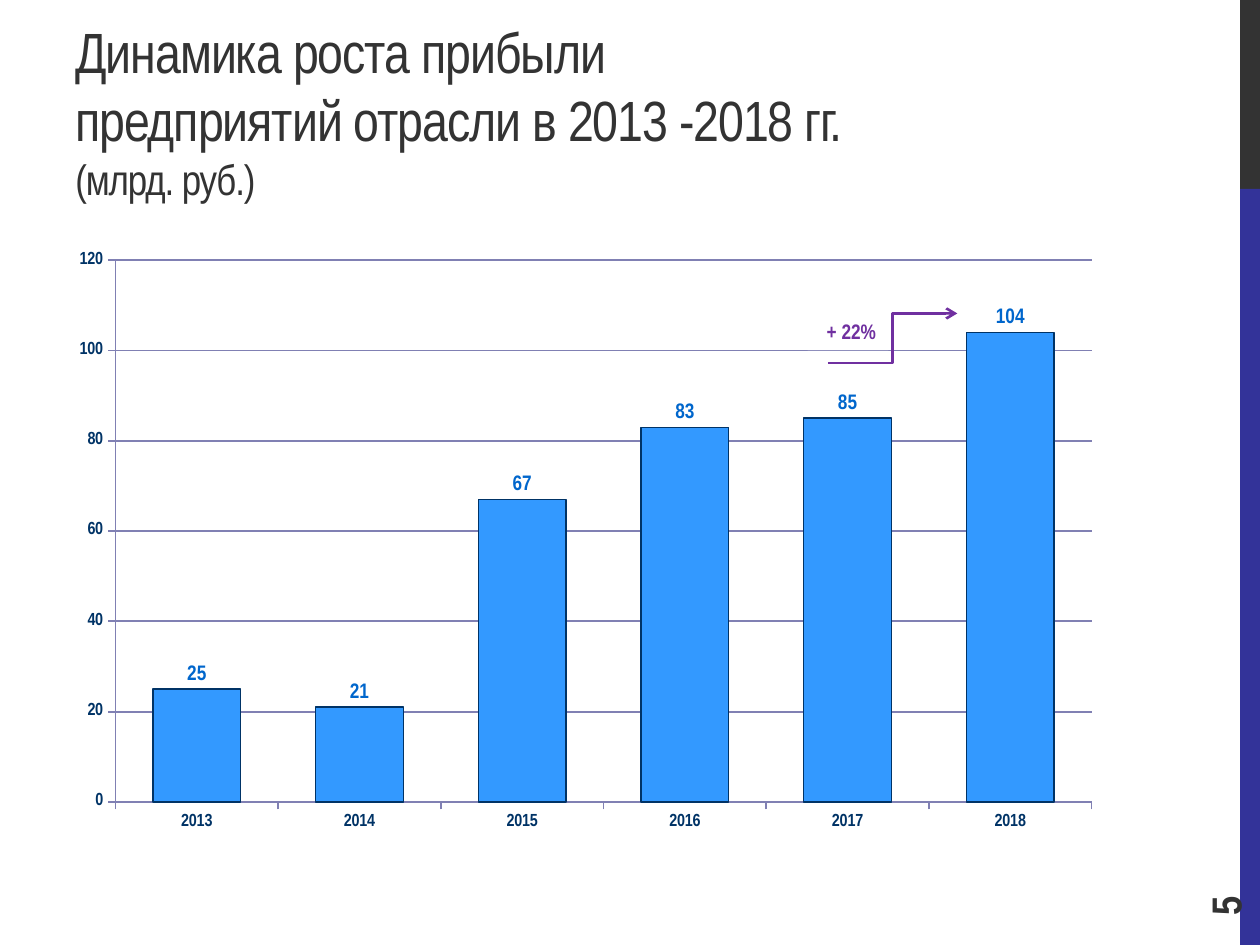
from dataclasses import dataclass

from lxml import etree
from pptx import Presentation
from pptx import util as u
from pptx.chart.data import CategoryChartData
from pptx.dml.color import RGBColor
from pptx.enum import chart as ch
from pptx.enum import shapes, text
from pptx.oxml import parse_xml
from pptx.oxml.ns import nsdecls, qn

FONT = "Arial Narrow"
DARK, INDIGO, NAVY, PURPLE = "333333", "333399", "003366", "7030A0"
BAR, VALUE, GRID = "3399FF", "0066CC", "8080B3"
PROFIT = {"2013": 25, "2014": 21, "2015": 67, "2016": 83, "2017": 85, "2018": 104}


@dataclass(frozen=True)
class Box:
    left: float
    top: float
    width: float
    height: float

    def emu(self) -> tuple:
        return tuple(u.Cm(v) for v in (self.left, self.top, self.width, self.height))


@dataclass(frozen=True)
class Band:
    box: Box
    color: str


BANDS = (
    Band(Box(25, 0, 0.4, 3.81), DARK),
    Band(Box(25, 3.81, 0.4, 15.24), INDIGO),
)


def rgb(value: str) -> RGBColor:
    return RGBColor.from_string(value)


def style_font(font, size: float, color: str, bold: bool = False) -> None:
    font.name = FONT
    font.size = u.Pt(size)
    font.bold = bold
    font.color.rgb = rgb(color)


def style_line(line, color: str, width: float) -> None:
    line.color.rgb = rgb(color)
    line.width = u.Pt(width)


def add_block(slide, box: Box, color: str):
    block = slide.shapes.add_shape(shapes.MSO_SHAPE.RECTANGLE, *box.emu())
    block.shadow.inherit = False
    block.fill.solid()
    block.fill.fore_color.rgb = rgb(color)
    block.line.fill.background()
    return block


def add_title(slide, box: Box) -> None:
    frame = slide.shapes.add_textbox(*box.emu()).text_frame
    frame.word_wrap = True
    frame.vertical_anchor = text.MSO_ANCHOR.BOTTOM
    heading = frame.paragraphs[0]
    for wording, size in (
        ("Динамика роста прибыли предприятий отрасли в 2013 -2018 гг. ", 32.4),
        ("(млрд. руб.)", 24.3),
    ):
        run = heading.add_run()
        run.text = wording
        style_font(run.font, size, DARK)
        run.font._element.set("spc", "-60")


def add_page_number(slide, box: Box, number: str) -> None:
    holder = slide.shapes.add_textbox(*box.emu())
    holder.rotation = 270
    frame = holder.text_frame
    frame.word_wrap = True
    frame.vertical_anchor = text.MSO_ANCHOR.MIDDLE
    frame.text = number
    style_font(frame.paragraphs[0].font, 24, DARK, True)


def style_axis(axis) -> None:
    axis.major_tick_mark = ch.XL_TICK_MARK.OUTSIDE
    axis.minor_tick_mark = ch.XL_TICK_MARK.NONE
    style_font(axis.tick_labels.font, 10, NAVY, True)
    style_line(axis.format.line, GRID, 1)


def set_plot_layout(chart, box: Box) -> None:
    plot_area = chart._chartSpace.find(".//" + qn("c:plotArea"))
    for old in plot_area.findall(qn("c:layout")):
        plot_area.remove(old)
    sides = zip("xywh", (box.left, box.top, box.width, box.height))
    plot_area.insert(0, parse_xml(
        f'<c:layout {nsdecls("c")}><c:manualLayout><c:layoutTarget val="inner"/>'
        '<c:xMode val="edge"/><c:yMode val="edge"/>'
        + "".join(f'<c:{side} val="{share}"/>' for side, share in sides)
        + "</c:manualLayout></c:layout>"
    ))


def add_profit_chart(slide, box: Box) -> None:
    profit = CategoryChartData(number_format="#,##0")
    profit.categories = list(PROFIT)
    profit.add_series("Series 1", list(PROFIT.values()))
    chart = slide.shapes.add_chart(
        ch.XL_CHART_TYPE.COLUMN_CLUSTERED, *box.emu(), profit
    ).chart
    chart.has_legend = False
    chart.has_title = False
    style_font(chart.font, 10, INDIGO)
    style_axis(chart.category_axis)

    scale = chart.value_axis
    style_axis(scale)
    scale.minimum_scale, scale.maximum_scale, scale.major_unit = 0, 120, 20
    scale.has_major_gridlines = True
    style_line(scale.major_gridlines.format.line, GRID, 1)

    plot = chart.plots[0]
    plot.gap_width = 86
    plot.vary_by_categories = False
    bars = plot.series[0]
    bars.format.fill.solid()
    bars.format.fill.fore_color.rgb = rgb(BAR)
    style_line(bars.format.line, NAVY, 0.75)
    labels = bars.data_labels
    labels.show_value = True
    labels.position = ch.XL_LABEL_POSITION.OUTSIDE_END
    labels.number_format = "#,##0"
    labels.number_format_is_linked = False
    style_font(labels.font, 12, VALUE, True)
    set_plot_layout(chart, Box(0.05, 0.03, 0.93, 0.9))


def add_growth_arrow(slide, start: tuple, end: tuple) -> None:
    arrow = slide.shapes.add_connector(
        shapes.MSO_CONNECTOR.ELBOW, *(u.Cm(v) for v in start + end)
    )
    style_line(arrow.line, PURPLE, 1.5)
    etree.SubElement(arrow.line._get_or_add_ln(), qn("a:tailEnd"), type="arrow")
    etree.SubElement(arrow._element.spPr, qn("a:effectLst"))


def add_growth_label(slide, box: Box, wording: str) -> None:
    frame = add_block(slide, box, "FFFFFF").text_frame
    frame.word_wrap = True
    frame.auto_size = text.MSO_AUTO_SIZE.SHAPE_TO_FIT_TEXT
    frame.vertical_anchor = text.MSO_ANCHOR.TOP
    frame.text = wording
    growth = frame.paragraphs[0]
    growth.alignment = text.PP_ALIGN.RIGHT
    style_font(growth.font, 12, PURPLE, True)


def main() -> None:
    deck = Presentation()
    deck.slide_width, deck.slide_height = u.Cm(25.4), u.Cm(19.05)
    slide = deck.slides.add_slide(deck.slide_layouts[6])
    for band in BANDS:
        add_block(slide, band.box, band.color)
    add_title(slide, Box(1.27, 0.43, 16.08, 3.81))
    add_profit_chart(slide, Box(1.27, 4.88, 21.16, 12.14))
    add_page_number(slide, Box(22.86, 16.36, 3.66, 1.02), "5")
    add_growth_arrow(slide, (16.69, 7.32), (19.3, 6.32))
    add_growth_label(slide, Box(16.28, 6.3, 1.63, 0.76), "+ 22%")
    deck.save("out.pptx")


if __name__ == "__main__":
    main()
